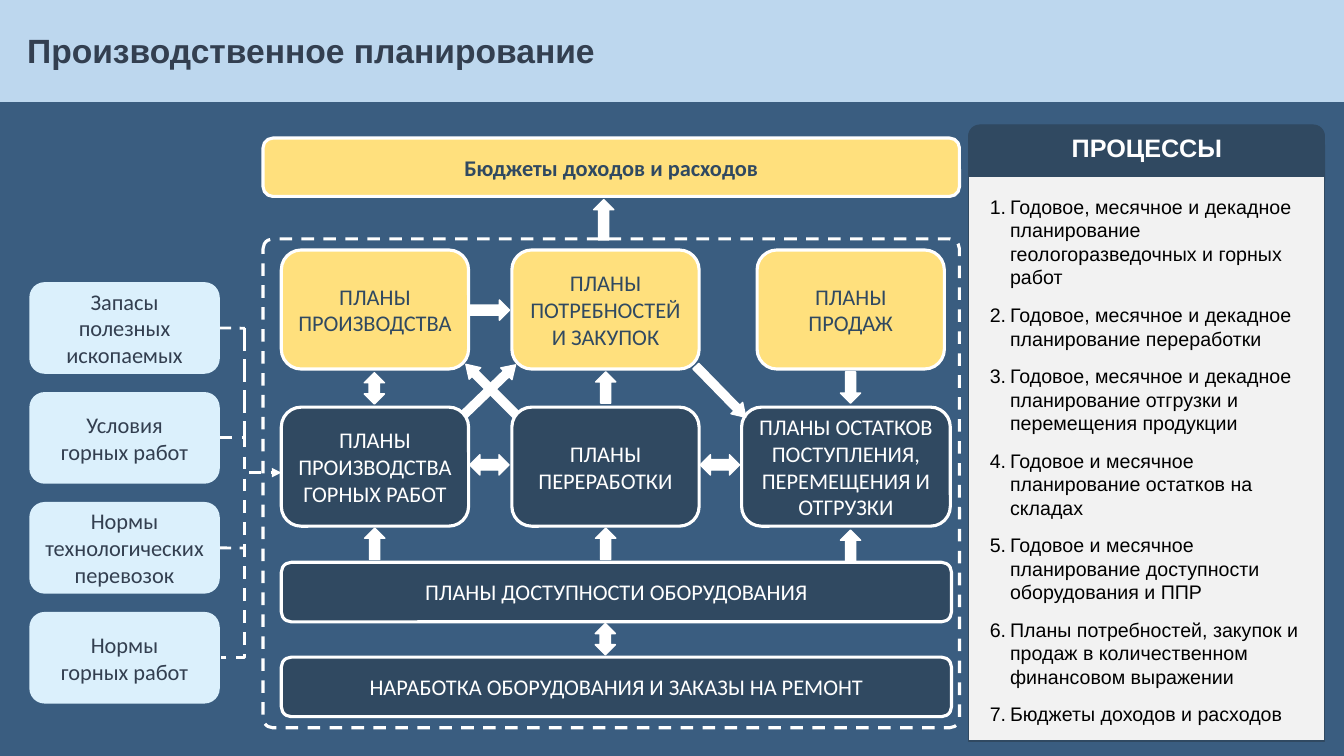
import dataclasses

import lxml.etree
import pptx
import pptx.dml.color
import pptx.enum.dml
import pptx.enum.shapes
import pptx.enum.text
import pptx.oxml.ns
import pptx.util

Cm = pptx.util.Cm
Pt = pptx.util.Pt
SHAPES = pptx.enum.shapes.MSO_SHAPE
CONNECTORS = pptx.enum.shapes.MSO_CONNECTOR
DASHES = pptx.enum.dml.MSO_LINE
ALIGN = pptx.enum.text.PP_ALIGN
ANCHOR = pptx.enum.text.MSO_ANCHOR


@dataclasses.dataclass(frozen=True)
class Theme:
    background: str = "3A5D80"
    band: str = "BDD7EE"
    navy: str = "304961"
    yellow: str = "FFE07D"
    pale: str = "DBF0FC"
    panel: str = "F2F2F2"
    white: str = "FFFFFF"
    black: str = "000000"
    slate: str = "333F50"
    heading_font: str = "Arial"
    box_font: str = "Calibri"
    title_size: int = 24
    panel_size: int = 18
    box_size: int = 16
    list_size: int = 14
    outline: float = 2.25


def rgb(value):
    return pptx.dml.color.RGBColor.from_string(value)


def add_xml(parent, tag, **attributes):
    child = lxml.etree.SubElement(parent, pptx.oxml.ns.qn(tag))
    for name, value in attributes.items():
        child.set(name, str(value))
    return child


class PlanningSlide:
    def __init__(self, deck, theme):
        self.theme = theme
        self.slide = deck.slides.add_slide(deck.slide_layouts[1])
        self.shapes = self.slide.shapes
        fill = self.slide.background.fill
        fill.solid()
        fill.fore_color.rgb = rgb(theme.background)

    def style_font(self, para, font_name, size, color, bold=False):
        para.font.name = font_name
        para.font.size = Pt(size)
        para.font.bold = bold
        para.font.color.rgb = rgb(color)

    def place(self, shape, left, top, width, height):
        shape.left, shape.top = Cm(left), Cm(top)
        shape.width, shape.height = Cm(width), Cm(height)
        self.shapes._spTree.append(shape._element)

    def shape(self, kind, left, top, width, height, fill=None, line=None, weight=1):
        shape = self.shapes.add_shape(kind, Cm(left), Cm(top), Cm(width), Cm(height))
        shape.shadow.inherit = False
        if fill:
            shape.fill.solid()
            shape.fill.fore_color.rgb = rgb(fill)
        else:
            shape.fill.background()
        if line:
            shape.line.color.rgb = rgb(line)
            shape.line.width = Pt(weight)
        else:
            shape.line.fill.background()
        return shape

    def label(self, shape, text, font_name, size, color, bold=False):
        frame = shape.text_frame
        frame.word_wrap = True
        frame.vertical_anchor = ANCHOR.MIDDLE
        frame.text = text
        para = frame.paragraphs[0]
        para.alignment = ALIGN.CENTER
        self.style_font(para, font_name, size, color, bold)

    def box(self, text, left, top, width, height, fill, color, outlined=True, bold=False):
        line = self.theme.white if outlined else None
        box = self.shape(SHAPES.ROUNDED_RECTANGLE, left, top, width, height,
                         fill, line, self.theme.outline)
        self.label(box, text, self.theme.box_font, self.theme.box_size, color, bold)
        return box

    def arrow(self, kind, left, top, width, height, rotation=0, adjustments=()):
        white = self.theme.white
        arrow = self.shape(kind, left, top, width, height, white, white)
        arrow.rotation = rotation
        for index, value in enumerate(adjustments):
            arrow.adjustments[index] = value

    def connector(self, x1, y1, x2, y2, weight=2, dash=DASHES.DASH, kind=CONNECTORS.STRAIGHT):
        line = self.shapes.add_connector(kind, Cm(x1), Cm(y1), Cm(x2), Cm(y2))
        line.line.color.rgb = rgb(self.theme.white)
        line.line.width = Pt(weight)
        line.line.dash_style = dash
        add_xml(line._element.spPr, "a:effectLst")
        return line

    def title(self, text):
        theme = self.theme
        self.shape(SHAPES.RECTANGLE, 0, 0, 33.87, 2.57, theme.band)
        title = self.shapes.title
        self.place(title, 0.43, 0.28, 21.36, 2.11)
        frame = title.text_frame
        frame.text = text
        frame.vertical_anchor = ANCHOR.MIDDLE
        frame.auto_size = pptx.enum.text.MSO_AUTO_SIZE.NONE
        para = frame.paragraphs[0]
        para.alignment = ALIGN.LEFT
        para.line_spacing = 0.9
        self.style_font(para, theme.heading_font, theme.title_size, theme.slate, True)

    def process_panel(self, heading, processes):
        theme = self.theme
        self.shape(SHAPES.ROUNDED_RECTANGLE, 24.41, 3.15, 8.97, 1.7,
                   theme.navy, theme.navy, 0.75)
        self.shape(SHAPES.RECTANGLE, 24.41, 4.45, 8.97, 14.22, theme.panel, theme.navy)
        header = self.shape(SHAPES.RECTANGLE, 24.69, 3.2, 8.43, 1.02,
                            theme.navy, theme.navy, 0.75)
        self.label(header, heading, theme.heading_font, theme.panel_size, theme.white, True)
        body = self.slide.placeholders[1]
        self.place(body, 24.18, 4.78, 8.97, 13.77)
        frame = body.text_frame
        frame.auto_size = pptx.enum.text.MSO_AUTO_SIZE.NONE
        frame.vertical_anchor = ANCHOR.TOP
        frame.text = "\n".join(processes)
        for para in frame.paragraphs:
            para.space_before = Pt(0)
            para.space_after = Pt(10)
            properties = para._p.get_or_add_pPr()
            properties.set("marL", str(Cm(1.02)))
            properties.set("indent", str(Cm(-0.51)))
            add_xml(properties, "a:buFont", typeface="+mj-lt")
            add_xml(properties, "a:buAutoNum", type="arabicPeriod")
            self.style_font(para, theme.heading_font, theme.list_size, theme.black)


def main():
    deck = pptx.Presentation()
    deck.slide_width, deck.slide_height = Cm(33.87), Cm(19.05)
    theme = Theme()
    page = PlanningSlide(deck, theme)
    page.title("Производственное планирование")

    inputs = ["Запасы полезных ископаемых", "Условия\vгорных работ",
              "Нормы технологических перевозок", "Нормы\vгорных работ"]
    input_boxes = [page.box(text, 0.74, 7.11 + 2.77 * row, 4.8, 2.31,
                            theme.pale, theme.slate, outlined=False)
                   for row, text in enumerate(inputs)]

    plans = [
        ("ПЛАНЫ ПРОИЗВОДСТВА ГОРНЫХ РАБОТ", 7.09, 10.26, 4.72, 3, theme.navy),
        ("ПЛАНЫ ПЕРЕРАБОТКИ", 12.9, 10.26, 4.72, 3, theme.navy),
        ("ПЛАНЫ ОСТАТКОВ ПОСТУПЛЕНИЯ, ПЕРЕМЕЩЕНИЯ И ОТГРУЗКИ", 18.69, 10.26, 5.26, 3, theme.navy),
        ("ПЛАНЫ ДОСТУПНОСТИ ОБОРУДОВАНИЯ", 7.09, 14.17, 16.89, 1.5, theme.navy),
        ("НАРАБОТКА ОБОРУДОВАНИЯ И ЗАКАЗЫ НА РЕМОНТ", 7.09, 16.56, 16.89, 1.5, theme.navy),
        ("ПЛАНЫ ПРОИЗВОДСТВА", 7.09, 6.3, 4.72, 3, theme.yellow),
        ("ПЛАНЫ ПОТРЕБНОСТЕЙ И ЗАКУПОК", 12.9, 6.3, 4.72, 3, theme.yellow),
        ("ПЛАНЫ ПРОДАЖ", 19.08, 6.3, 4.72, 3, theme.yellow),
    ]
    for text, left, top, width, height, fill in plans:
        color = theme.white if fill == theme.navy else theme.navy
        page.box(text, left, top, width, height, fill, color)

    bracket = page.connector(5.54, 11.03, 5.57, 16.57, theme.outline, kind=CONNECTORS.ELBOW)
    guides = bracket._element.spPr.find(pptx.oxml.ns.qn("a:prstGeom")).get_or_add_avLst()
    add_xml(guides, "a:gd", name="adj1", fmla="val 2100000")
    inflow = page.connector(6.27, 11.91, 7.09, 11.91, theme.outline)
    add_xml(inflow.line._get_or_add_ln(), "a:tailEnd", type="triangle")
    for row in (0, 2):
        middle = 8.27 + 2.77 * row
        branch = page.connector(5.54, middle, 6.17, middle)
        branch.begin_connect(input_boxes[row], 3)
    page.connector(6.17, 8.27, 6.17, 11.03, dash=DASHES.LONG_DASH)

    for left, top in ((9.19, 13.31), (15.01, 13.31), (21.18, 13.36), (15.01, 9.37)):
        page.arrow(SHAPES.UP_ARROW, left, top, 0.51, 0.79)
    page.arrow(SHAPES.DOWN_ARROW, 21.18, 9.37, 0.51, 0.79)
    page.arrow(SHAPES.UP_ARROW, 12.09, 7.32, 0.51, 0.99, 90)
    for left, top, rotation in ((12.17, 8.92, 315.1), (12.14, 8.92, 46), (17.96, 8.97, 135.7)):
        page.arrow(SHAPES.UP_ARROW, left, top, 0.41, 1.8, rotation, (0.5, 0.79))
    for left, top, width, rotation in ((14.86, 15.85, 0.79, 270), (9.04, 9.53, 0.79, 270),
                                       (11.84, 11.46, 0.99, 0), (17.65, 11.46, 0.99, 0)):
        page.arrow(SHAPES.LEFT_RIGHT_ARROW, left, top, width, 0.51, rotation, (0.51, 0.5))

    page.process_panel("ПРОЦЕССЫ", [
        "Годовое, месячное и декадное планирование геологоразведочных и горных работ",
        "Годовое, месячное и декадное планирование переработки",
        "Годовое, месячное и декадное планирование отгрузки и перемещения продукции",
        "Годовое и месячное планирование остатков на складах",
        "Годовое и месячное планирование доступности оборудования и ППР",
        "Планы потребностей, закупок и продаж в количественном финансовом выражении",
        "Бюджеты доходов и расходов",
    ])

    page.box("Бюджеты доходов и расходов", 6.63, 3.48, 17.55, 1.47,
             theme.yellow, theme.navy, bold=True)
    frame = page.shape(SHAPES.ROUNDED_RECTANGLE, 6.63, 6.02, 17.55, 12.32,
                       line=theme.white, weight=theme.outline)
    frame.adjustments[0] = 0.02
    frame.line.dash_style = DASHES.DASH
    page.arrow(SHAPES.UP_ARROW, 14.96, 5.03, 0.51, 1.02)

    deck.save("out.pptx")


if __name__ == "__main__":
    main()
